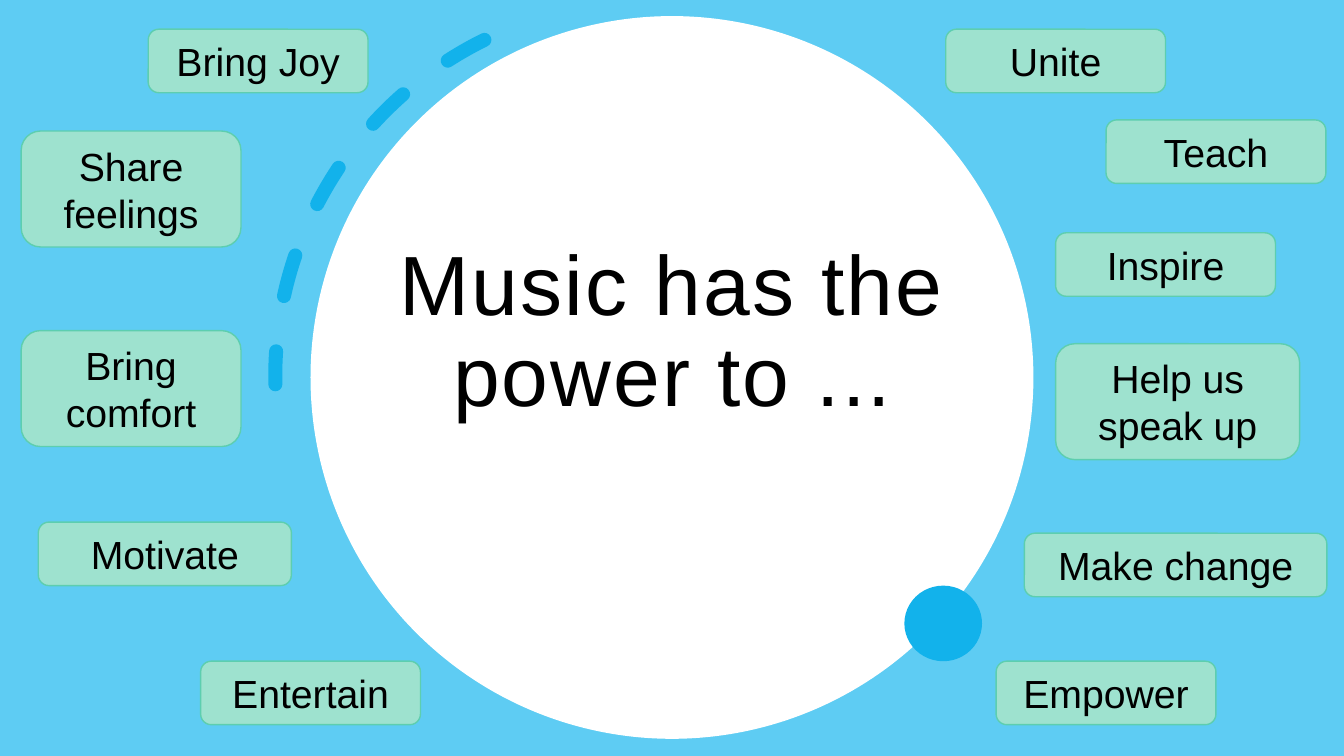
"""Build a slide of the powers of music, arranged around a large white circle."""
from lxml import etree
from pptx import Presentation
from pptx.dml.color import RGBColor
from pptx.enum.dml import MSO_LINE
from pptx.enum.shapes import MSO_SHAPE
from pptx.enum.text import MSO_ANCHOR, MSO_AUTO_SIZE, PP_ALIGN
from pptx.util import Pt

PX = 9144
FONT = "Arial"
SKY = RGBColor(0x5E, 0xCC, 0xF3)
BLUE = RGBColor(0x12, 0xB2, 0xEB)
MINT = RGBColor(0x9E, 0xE2, 0xCF)
GREEN = RGBColor(0x5D, 0xCE, 0xAF)
WHITE = RGBColor(0xFF, 0xFF, 0xFF)
BLACK = RGBColor(0x00, 0x00, 0x00)
RECTANGLE, OVAL = MSO_SHAPE.RECTANGLE, MSO_SHAPE.OVAL
ROUNDED, ARC = MSO_SHAPE.ROUNDED_RECTANGLE, MSO_SHAPE.ARC
CENTER, MIDDLE, BOTTOM = PP_ALIGN.CENTER, MSO_ANCHOR.MIDDLE, MSO_ANCHOR.BOTTOM
NO_AUTOFIT, DASH = MSO_AUTO_SIZE.NONE, MSO_LINE.DASH

presentation = Presentation()
presentation.slide_width = 1333 * PX
presentation.slide_height = 750 * PX
slide = presentation.slides.add_slide(presentation.slide_layouts[5])


def add_filled(kind, left, top, width, height, color):
    shape = slide.shapes.add_shape(kind, left * PX, top * PX, width * PX, height * PX)
    shape.shadow.inherit = False
    shape.fill.solid()
    shape.fill.fore_color.rgb = color
    shape.line.fill.background()
    return shape


def write_centered(shape, text, size, anchor):
    frame = shape.text_frame
    frame.word_wrap = True
    frame.auto_size = NO_AUTOFIT
    frame.vertical_anchor = anchor
    paragraph = frame.paragraphs[0]
    paragraph.alignment = CENTER
    run = paragraph.add_run()
    run.text = text
    run.font.name = FONT
    run.font.size = Pt(size)
    run.font.color.rgb = BLACK
    return paragraph, run


add_filled(RECTANGLE, 0, 0, 1333, 750, SKY)
circle = add_filled(OVAL, 308, 16, 717, 717, WHITE)

title = slide.shapes.title
title.left, title.top, title.width, title.height = 363 * PX, 151 * PX, 608 * PX, 275 * PX
title_paragraph, title_run = write_centered(title, "Music has the power to ...", 60, BOTTOM)
title_paragraph.line_spacing = 0.9
title_run.font._element.set("spc", "150")
circle._element.addnext(title._element)

arc = add_filled(ARC, 273, 1, 745, 745, BLUE)
arc.fill.background()
arc.adjustments[0] = 162
arc.adjustments[1] = 200.93
arc.rotation = 153.7
arc._element.spPr.find("{*}xfrm").set("flipV", "1")
arc.line.color.rgb = BLUE
arc.line.width = Pt(10)
arc.line.dash_style = DASH
arc_line = arc._element.spPr.find("{*}ln")
arc_line.set("cap", "rnd")
etree.SubElement(arc_line, arc_line.tag.replace("}ln", "}round"))

add_filled(OVAL, 897, 581, 77, 75, BLUE)

ONE_LINE, TWO_LINES = 63, 115
powers = [
    ("Bring Joy", 147, 29, 218, ONE_LINE),
    ("Share feelings", 21, 130, 218, TWO_LINES),
    ("Bring comfort", 21, 328, 218, TWO_LINES),
    ("Entertain", 199, 656, 218, ONE_LINE),
    ("Motivate", 38, 518, 251, ONE_LINE),
    ("Empower", 988, 656, 218, ONE_LINE),
    ("Help us speak up", 1047, 341, 242, TWO_LINES),
    ("Unite", 938, 29, 218, ONE_LINE),
    ("Teach", 1097, 119, 218, ONE_LINE),
    ("Inspire", 1047, 231, 218, ONE_LINE),
    ("Make change", 1016, 529, 300, ONE_LINE),
]
for text, left, top, width, height in powers:
    label = add_filled(ROUNDED, left, top, width, height, MINT)
    label.line.color.rgb = GREEN
    label.line.width = Pt(1)
    write_centered(label, text, 28, MIDDLE)

presentation.save("out.pptx")
